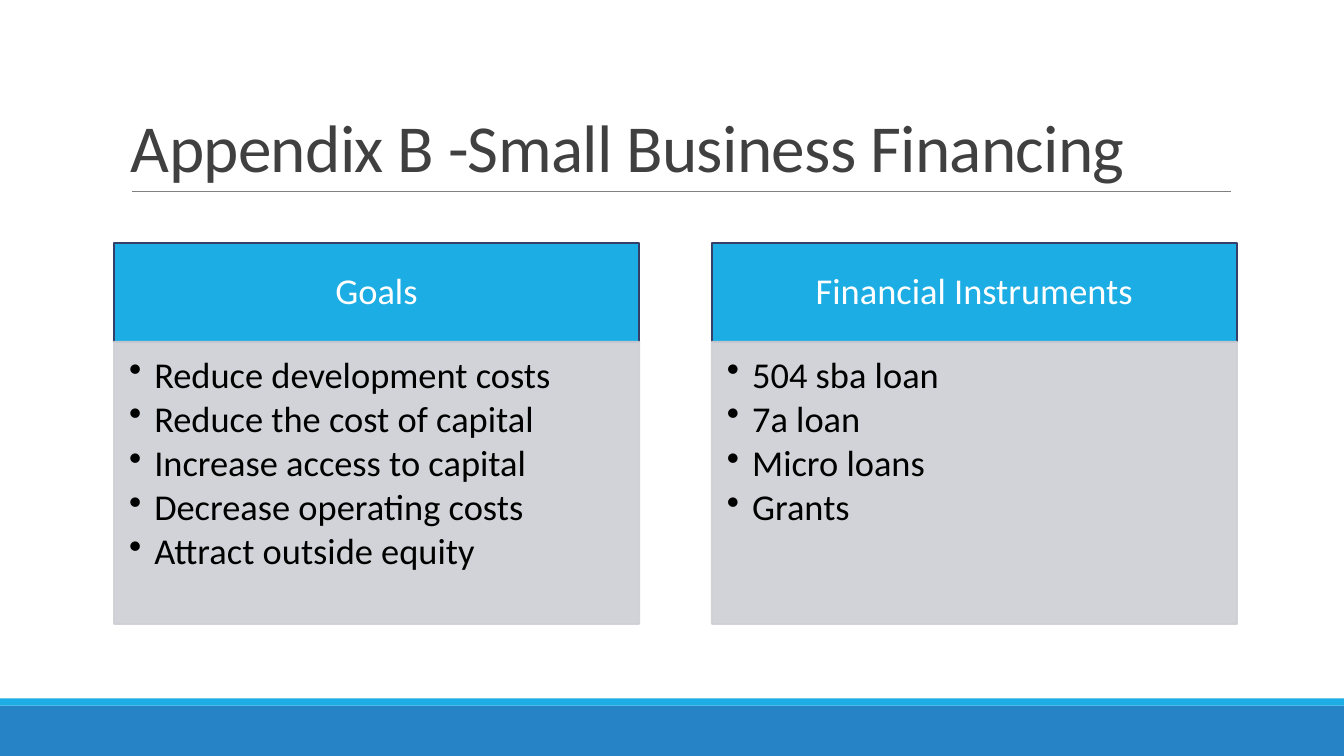
from dataclasses import dataclass

import lxml.etree
import pptx
import pptx.dml.color
import pptx.enum.shapes
import pptx.enum.text
import pptx.oxml.ns
import pptx.util

Inches = pptx.util.Inches
Pt = pptx.util.Pt
Anchor = pptx.enum.text.MSO_ANCHOR
Align = pptx.enum.text.PP_ALIGN


@dataclass(frozen=True)
class Theme:
    """Colours, font and type sizes of the slide."""
    font: str = "Calibri"
    title_size: float = 48
    body_size: float = 26
    title: str = "404040"
    rule: str = "808080"
    accent: str = "1CADE4"
    footer: str = "2683C6"
    header_line: str = "344068"
    panel: str = "CECFD4"
    header_text: str = "FFFFFF"
    body_text: str = "000000"


THEME = Theme()

COLUMNS = [
    ("Goals", ["Reduce development costs", "Reduce the cost of capital",
               "Increase access to capital", "Decrease operating costs",
               "Attract outside equity"]),
    ("Financial Instruments", ["504 sba loan", "7a loan", "Micro loans", "Grants"]),
]


def rgb(value):
    """Turn a hex string into a colour."""
    return pptx.dml.color.RGBColor.from_string(value)


def add_element(parent, tag, **attributes):
    """Append a DrawingML element to a parent."""
    return lxml.etree.SubElement(parent, pptx.oxml.ns.qn(tag), attributes)


def add_rectangle(slide, box, fill, line=None):
    """Draw a flat rectangle in a box of inches."""
    shape = slide.shapes.add_shape(
        pptx.enum.shapes.MSO_SHAPE.RECTANGLE, *map(Inches, box))
    shape.shadow.inherit = False
    shape.fill.solid()
    shape.fill.fore_color.rgb = rgb(fill)
    if line:
        shape.line.color.rgb = rgb(line)
        shape.line.width = Pt(1.25)
    else:
        shape.line.fill.background()
    return shape


def set_frame(shape, anchor, insets):
    """Set wrapping, anchor and insets, and return the text frame."""
    frame = shape.text_frame
    frame.word_wrap = True
    frame.vertical_anchor = anchor
    (frame.margin_left, frame.margin_top,
     frame.margin_right, frame.margin_bottom) = map(Inches, insets)
    return frame


def add_run(paragraph, text, size, color, alignment=Align.LEFT, spacing=0.9):
    """Add a styled run to a paragraph and return the run."""
    paragraph.alignment = alignment
    paragraph.line_spacing = spacing
    run = paragraph.add_run()
    run.text = text
    run.font.name = THEME.font
    run.font.size = Pt(size)
    run.font.color.rgb = rgb(color)
    return run


def add_footer(slide, box):
    """Draw the footer band with its thin accent strip on top."""
    left, top, width, height = box
    strip = 0.07
    add_rectangle(slide, (left, top + strip, width, height - strip), THEME.footer)
    add_rectangle(slide, (left, top, width, strip), THEME.accent)


def add_title(slide, box, text):
    """Place the title at the bottom of its box with a rule beneath."""
    left, top, width, height = box
    bottom = Inches(top + height)
    rule = slide.shapes.add_connector(
        pptx.enum.shapes.MSO_CONNECTOR.STRAIGHT,
        Inches(left + 0.11), bottom, Inches(left + width + 0.01), bottom)
    rule.line.color.rgb = rgb(THEME.rule)
    rule.line.width = Pt(0.5)
    add_element(rule._element.spPr, "a:effectLst")
    shape = slide.shapes.add_textbox(*map(Inches, box))
    frame = set_frame(shape, Anchor.BOTTOM, (0.1, 0.05, 0.1, 0.05))
    run = add_run(frame.paragraphs[0], text, THEME.title_size, THEME.title, spacing=0.85)
    run.font._element.set("spc", "-50")


def add_column(slide, box, heading, items):
    """Draw a heading block above a panel of bullets."""
    left, top, width, height = box
    header_height = 0.98
    header = add_rectangle(slide, (left, top, width, header_height),
                           THEME.accent, THEME.header_line)
    frame = set_frame(header, Anchor.MIDDLE, (0.2, 0.12, 0.2, 0.12))
    add_run(frame.paragraphs[0], heading, THEME.body_size, THEME.header_text, Align.CENTER)

    panel = add_rectangle(
        slide, (left, top + header_height, width, height - header_height),
        THEME.panel, THEME.panel)
    for color in panel._element.spPr.iter(pptx.oxml.ns.qn("a:srgbClr")):
        add_element(color, "a:alpha", val="90000")
    frame = set_frame(panel, Anchor.TOP, (0.15, 0.15, 0.2, 0.23))
    for index, item in enumerate(items):
        paragraph = frame.add_paragraph() if index else frame.paragraphs[0]
        add_run(paragraph, item, THEME.body_size, THEME.body_text)
        paragraph.space_after = Pt(3.4)
        properties = paragraph._p.get_or_add_pPr()
        indent = Inches(0.25)
        properties.set("marL", str(indent))
        properties.set("indent", str(-indent))
        add_element(properties, "a:buChar", char="•")


def add_columns(slide, box, columns, gap):
    """Split a box into equal columns separated by a gap."""
    left, top, width, height = box
    column_width = (width - gap * (len(columns) - 1)) / len(columns)
    for index, (heading, items) in enumerate(columns):
        column_left = left + index * (column_width + gap)
        add_column(slide, (column_left, top, column_width, height), heading, items)


def main():
    """Build the slide and save the presentation."""
    presentation = pptx.Presentation()
    presentation.slide_width = Inches(13.33)
    presentation.slide_height = Inches(7.5)
    slide = presentation.slides.add_slide(presentation.slide_layouts[6])
    add_footer(slide, (0, 6.93, 13.33, 0.57))
    add_title(slide, (1.2, 0.31, 11, 1.59), "Appendix B -Small Business Financing")
    add_columns(slide, (1.13, 2.41, 11.14, 3.78), COLUMNS, gap=0.72)
    presentation.save("out.pptx")


if __name__ == "__main__":
    main()
